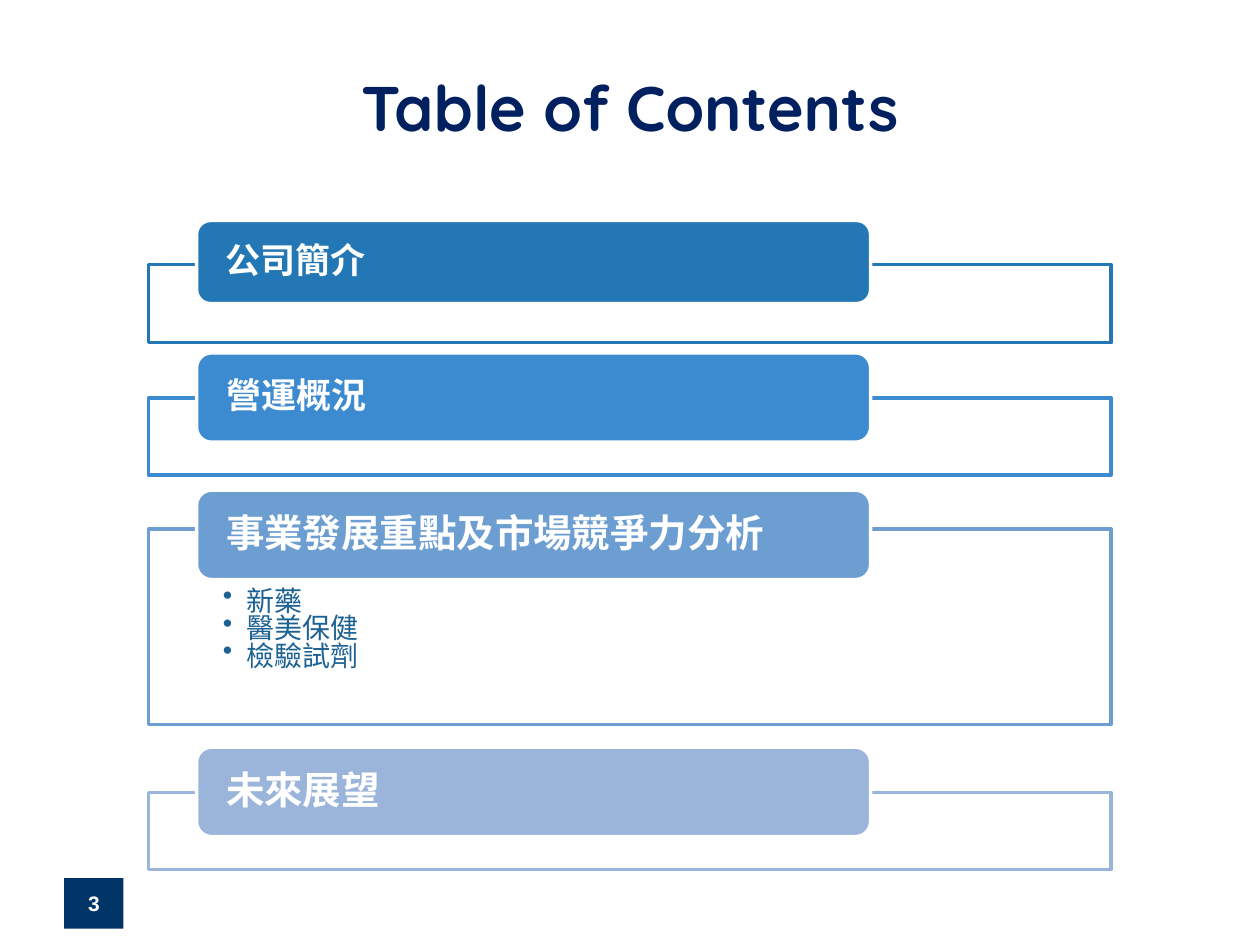
from lxml.etree import SubElement
from pptx import Presentation
from pptx.dml.color import RGBColor
from pptx.enum.shapes import MSO_SHAPE as Shape
from pptx.enum.text import MSO_ANCHOR as Anchor, PP_ALIGN as Align
from pptx.oxml.ns import qn
from pptx.util import Inches, Pt

COLORS = {
    "title": "002060",
    "page": "003366",
    "white": "FFFFFF",
    "bullet": "1D6294",
    "company": "2277B4",
    "operations": "3C8ACF",
    "business": "6D9ED2",
    "outlook": "9AB5D9",
}
CJK_FONT = "Noto Sans CJK SC"
FRAME_LEFT, FRAME_WIDTH = 1.18, 7.64
TAB_LEFT, TAB_WIDTH = 1.56, 5.35
TAB_MARGINS = (0.2, 0, 0.2, 0)
FRAME_MARGINS = (0.59, 0.5, 0.59, 0.12)
BULLET_INDENT = 0.19
TAB_FORMAT = {"name": CJK_FONT, "bold": True}
BULLET_FORMAT = {"name": CJK_FONT, "size": Pt(16), "bold": False}
CENTERED = {"alignment": Align.CENTER}
TAB_PARAGRAPH = {"alignment": Align.LEFT, "line_spacing": 0.9}
BULLET_PARAGRAPH = {"alignment": Align.LEFT, "line_spacing": 0.7, "space_after": Pt(2.4)}
BUSINESS_TOPICS = ["新藥", "醫美保健", "檢驗試劑"]
SECTIONS = [
    ("公司簡介", "company", 20, (1.75, 0.66), (2.1, 0.62), []),
    ("營運概況", "operations", 20, (2.8, 0.71), (3.16, 0.61), []),
    ("事業發展重點及市場競爭力分析", "business", 22, (3.89, 0.71), (4.2, 1.55), BUSINESS_TOPICS),
    ("未來展望", "outlook", 22, (5.93, 0.71), (6.29, 0.61), []),
]


def rgb(name):
    """Return the named palette colour."""
    return RGBColor.from_string(COLORS[name])


def apply(target, values):
    """Set each named attribute of the target."""
    for name, value in values.items():
        setattr(target, name, value)


def add_box(slide, kind, box, fill, line=None):
    """Add a filled shape, outlined when a line colour is given."""
    shape = slide.shapes.add_shape(kind, *map(Inches, box))
    shape.shadow.inherit = False
    shape.fill.solid()
    shape.fill.fore_color.rgb = rgb(fill)
    if line:
        shape.line.color.rgb = rgb(line)
        shape.line.width = Pt(2)
    else:
        shape.line.fill.background()
    return shape


def set_opacity(shape, percent):
    """Make the solid fill of a shape partly transparent."""
    color = shape.fill._xPr.find(qn("a:solidFill"))[0]
    SubElement(color, qn("a:alpha"), val=str(percent * 1000))


def set_frame(shape, anchor, margins):
    """Set wrapping, anchor and margins, and return the text frame."""
    layout = {"word_wrap": True, "vertical_anchor": anchor}
    sides = ("margin_left", "margin_top", "margin_right", "margin_bottom")
    layout.update(zip(sides, map(Inches, margins)))
    apply(shape.text_frame, layout)
    return shape.text_frame


def write(paragraph, text, color, font, layout):
    """Write one formatted run into a paragraph."""
    apply(paragraph, layout)
    run = paragraph.add_run()
    run.text = text
    run.font.color.rgb = rgb(color)
    apply(run.font, font)
    SubElement(run._r.get_or_add_rPr(), qn("a:ea"), typeface=font["name"])


def add_bullet(paragraph):
    """Give a paragraph a hanging round bullet."""
    properties = paragraph._p.get_or_add_pPr()
    properties.set("marL", str(Inches(BULLET_INDENT)))
    properties.set("indent", str(-Inches(BULLET_INDENT)))
    SubElement(properties, qn("a:buChar"), char="•")


def add_title(slide, text):
    """Add the centred slide title."""
    box = slide.shapes.add_textbox(*map(Inches, (0.5, 0.3, 9, 1.09)))
    frame = set_frame(box, Anchor.MIDDLE, (0.1, 0.05, 0.1, 0.05))
    font = {"name": "Quicksand", "size": Pt(36), "bold": True}
    write(frame.paragraphs[0], text, "title", font, CENTERED)


def add_page_number(slide, text):
    """Add the page number on its dark square."""
    shape = add_box(slide, Shape.RECTANGLE, (0.51, 6.97, 0.47, 0.4), "page")
    frame = set_frame(shape, Anchor.MIDDLE, (0, 0, 0, 0))
    font = {"name": "Arial", "size": Pt(12), "bold": True}
    write(frame.paragraphs[0], text, "white", font, CENTERED)


def add_section(slide, heading, color, size, tab_span, frame_span, topics):
    """Add an outlined frame with its topics and a heading tab on top."""
    outline_box = (FRAME_LEFT, frame_span[0], FRAME_WIDTH, frame_span[1])
    outline = add_box(slide, Shape.RECTANGLE, outline_box, "white", color)
    set_opacity(outline, 90)
    frame = set_frame(outline, Anchor.TOP, FRAME_MARGINS)
    for index, topic in enumerate(topics):
        paragraph = frame.add_paragraph() if index else frame.paragraphs[0]
        write(paragraph, topic, "bullet", BULLET_FORMAT, BULLET_PARAGRAPH)
        add_bullet(paragraph)
    tab_box = (TAB_LEFT, tab_span[0], TAB_WIDTH, tab_span[1])
    tab = add_box(slide, Shape.ROUNDED_RECTANGLE, tab_box, color, "white")
    frame = set_frame(tab, Anchor.MIDDLE, TAB_MARGINS)
    font = {**TAB_FORMAT, "size": Pt(size)}
    write(frame.paragraphs[0], heading, "white", font, TAB_PARAGRAPH)


def main():
    """Build the table of contents slide and save it."""
    presentation = Presentation()
    presentation.slide_width = Inches(10)
    presentation.slide_height = Inches(7.5)
    slide = presentation.slides.add_slide(presentation.slide_layouts[6])
    add_title(slide, "Table of Contents")
    add_page_number(slide, "3")
    for section in SECTIONS:
        add_section(slide, *section)
    presentation.save("out.pptx")


if __name__ == "__main__":
    main()
